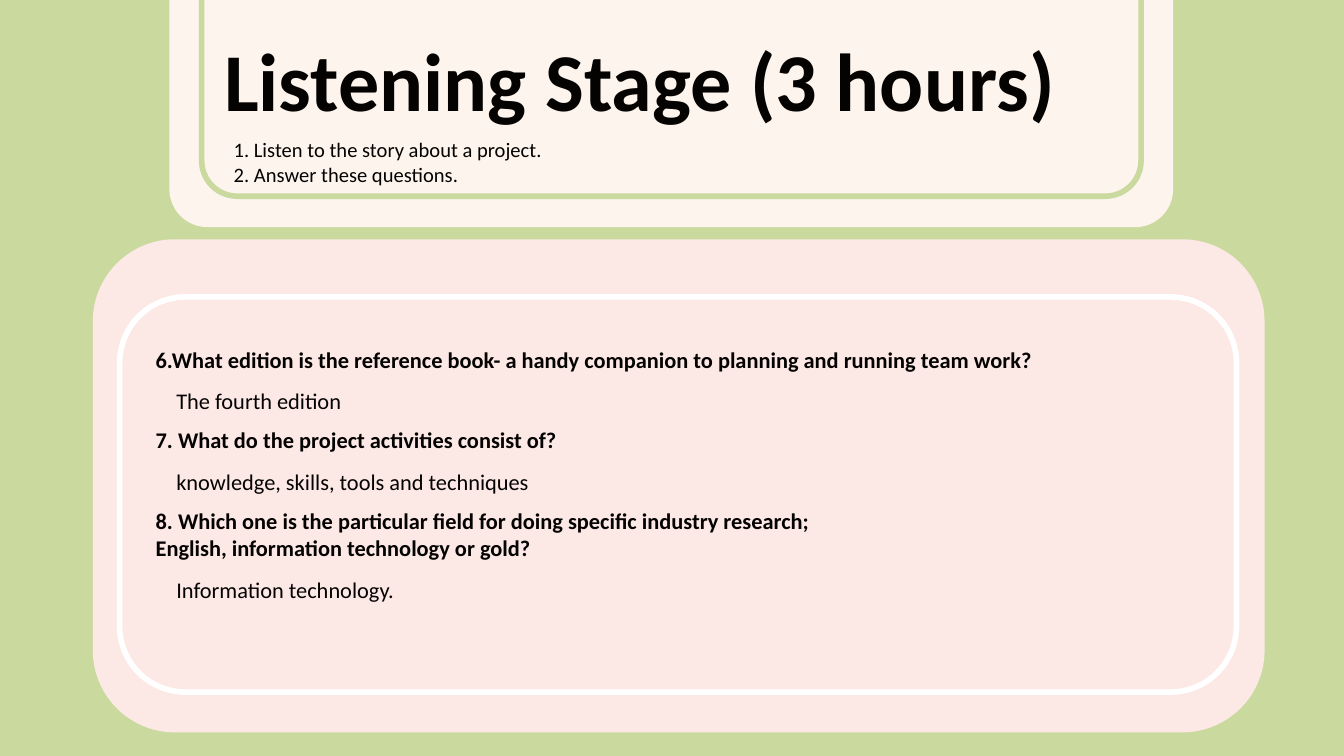
from dataclasses import dataclass

import pptx
import pptx.dml.color
import pptx.enum.shapes
import pptx.enum.text
import pptx.slide
import pptx.util

Pt = pptx.util.Pt
SHAPES = pptx.enum.shapes.MSO_SHAPE
FONT = "Calibri"
COLORS = {
    "green": "CAD99E",
    "cream": "FDF4ED",
    "pink": "FCE9E6",
    "white": "FFFFFF",
    "ink": "040301",
}


@dataclass
class Box:
    left: float
    top: float
    width: float
    height: float

    def lengths(self) -> list[pptx.util.Length]:
        return [Pt(v) for v in (self.left, self.top, self.width, self.height)]


@dataclass
class Panel:
    box: Box
    outline: pptx.enum.shapes.MSO_SHAPE
    fill: str | None = None
    line: str | None = None
    rotation: float = 0


@dataclass
class Line:
    text: str
    space_before: float = 0


@dataclass
class TextBlock:
    box: Box
    size: float
    lines: list[Line]
    bold: bool = False
    top_inset: float = 3.6


def rgb(name: str) -> pptx.dml.color.RGBColor:
    return pptx.dml.color.RGBColor.from_string(COLORS[name])


def draw_panel(slide: pptx.slide.Slide, panel: Panel) -> None:
    shape = slide.shapes.add_shape(panel.outline, *panel.box.lengths())
    shape.shadow.inherit = False
    shape.rotation = panel.rotation
    if panel.fill:
        shape.fill.solid()
        shape.fill.fore_color.rgb = rgb(panel.fill)
    else:
        shape.fill.background()
    if panel.line:
        shape.line.color.rgb = rgb(panel.line)
        shape.line.width = Pt(3)
    else:
        shape.line.fill.background()


def draw_text(slide: pptx.slide.Slide, block: TextBlock) -> None:
    frame = slide.shapes.add_textbox(*block.box.lengths()).text_frame
    frame.word_wrap = True
    frame.margin_top = Pt(block.top_inset)
    for index, line in enumerate(block.lines):
        paragraph = frame.paragraphs[0] if index == 0 else frame.add_paragraph()
        paragraph.alignment = pptx.enum.text.PP_ALIGN.LEFT
        paragraph.space_before = Pt(line.space_before)
        run = paragraph.add_run()
        run.text = line.text
        run.font.name = FONT
        run.font.size = Pt(block.size)
        run.font.bold = block.bold
        run.font.color.rgb = rgb("ink")


# Questions and answers interleave: each leaves room for the other
LINE_HEIGHT = 14.65
GAP = 28.8

# The header panels hang from the top edge, so their round corners face down
PANELS = [
    Panel(Box(90.7, -0.7, 537.8, 122.4), SHAPES.ROUND_2_SAME_RECTANGLE,
          fill="cream", rotation=180),
    Panel(Box(108, -9.4, 503.3, 114.5), SHAPES.ROUND_2_SAME_RECTANGLE,
          line="green", rotation=180),
    Panel(Box(49.7, 128.2, 627.8, 264.2), SHAPES.ROUNDED_RECTANGLE, fill="pink"),
    Panel(Box(64.1, 159.1, 598.3, 211.7), SHAPES.ROUNDED_RECTANGLE, line="white"),
]

TITLE = TextBlock(Box(113, 12.2, 541.4, 60.5), 44,
                  [Line("Listening Stage (3 hours)")], bold=True)
INSTRUCTIONS = TextBlock(Box(118.1, 69.8, 372.2, 33.8), 11, [
    Line("1. Listen to the story about a project."),
    Line("2. Answer these questions."),
])
QUESTIONS = TextBlock(Box(76.3, 167, 579.6, 138.2), 12, [
    Line("6.What edition is the reference book- a handy companion to "
         "planning and running team work?"),
    Line("7. What do the project activities consist of?", GAP),
    Line("8. Which one is the particular field for doing specific "
         "industry research;", GAP),
    Line("English, information technology or gold?"),
], bold=True, top_inset=3.6 + LINE_HEIGHT)
ANSWERS = TextBlock(Box(87.4, 203.8, 360, 123.8), 12, [
    Line("The fourth edition"),
    Line("knowledge, skills, tools and techniques", GAP),
    Line("Information technology.", GAP + LINE_HEIGHT),
])


def main() -> None:
    deck = pptx.Presentation()
    deck.slide_width, deck.slide_height = Pt(720), Pt(405)
    slide = deck.slides.add_slide(deck.slide_layouts[6])

    # Background
    slide.background.fill.solid()
    slide.background.fill.fore_color.rgb = rgb("green")

    # Header and content panels, then the text on them
    for panel in PANELS:
        draw_panel(slide, panel)
    for block in (TITLE, INSTRUCTIONS, QUESTIONS, ANSWERS):
        draw_text(slide, block)

    deck.save("out.pptx")


if __name__ == "__main__":
    main()
